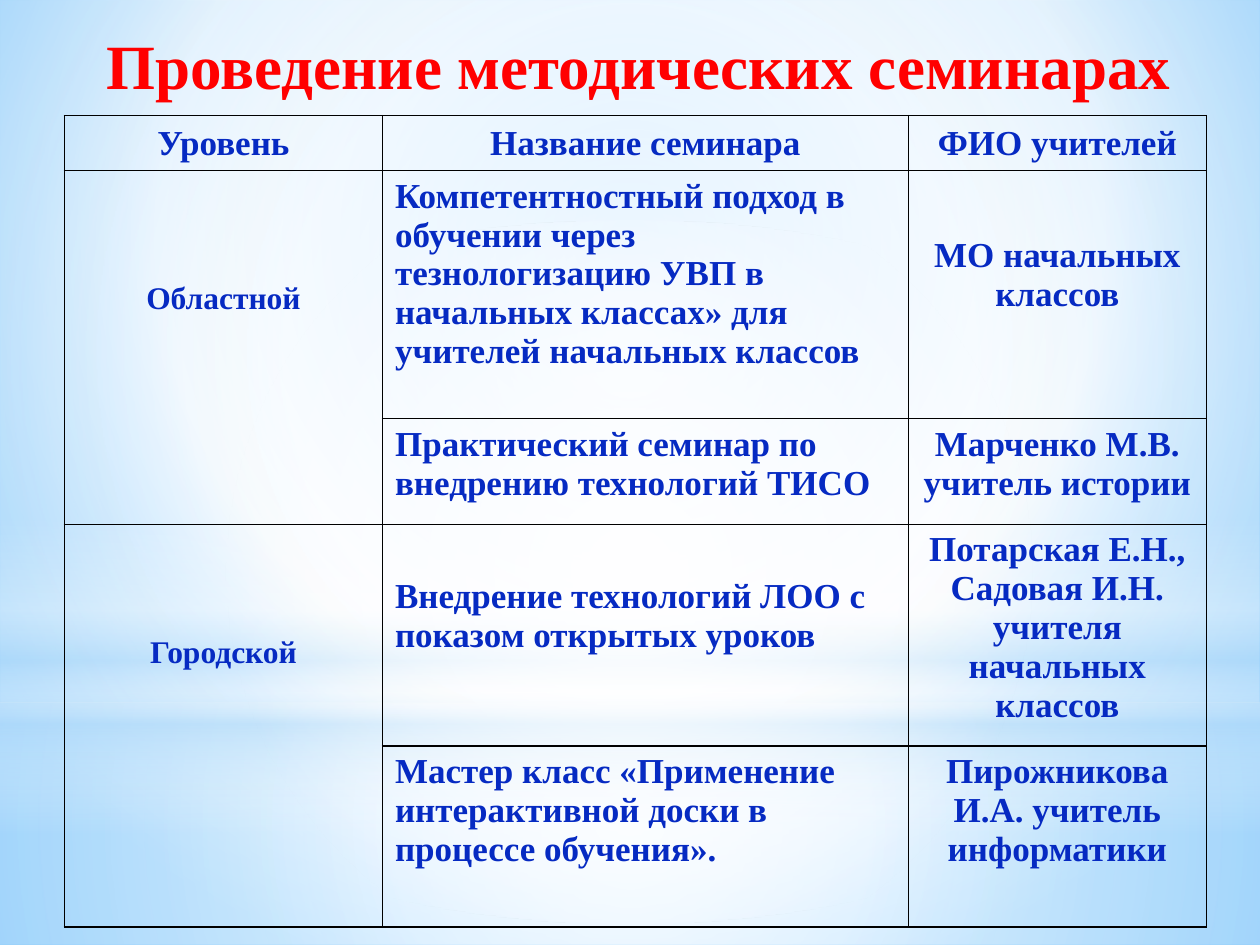
from lxml.etree import SubElement as Sub
from pptx import Presentation
from pptx.dml.color import RGBColor
from pptx.enum.shapes import MSO_SHAPE as Kind
from pptx.enum.text import MSO_ANCHOR as Anchor, MSO_AUTO_SIZE as Fit, PP_ALIGN as Align
from pptx.oxml import parse_xml
from pptx.oxml.ns import nsdecls, qn
from pptx.util import Cm, Pt

RED = RGBColor(0xFF, 0x00, 0x00)
BLUE = RGBColor(0x06, 0x2A, 0xC2)
BLACK = RGBColor(0x00, 0x00, 0x00)
WHITE = RGBColor(0xFF, 0xFF, 0xFF)
PALE = RGBColor(0xB4, 0xDC, 0xFA)
SKY = RGBColor(0x9E, 0xD5, 0xFF)
DEEP = RGBColor(0x5B, 0xB9, 0xFF)

FONT = "Times New Roman"
MID = (50, 50, 50, 50)
WIDE = 25.4
COLS = (6.41, 10.6, 6.01)
ROWS = (1.11, 5, 2.13, 4.47, 3.65)
PAD = 0.91
DROP = 2.24

PANELS = (
    (Kind.RECTANGLE, 14.17, 4.88, MID,
     ((0, WHITE, 91), (37, WHITE, 76), (100, PALE, 79))),
    (Kind.RECTANGLE, 0, 14.17, MID,
     ((0, WHITE, 89), (48, WHITE, 62), (100, PALE, 79))),
    (Kind.RECTANGLE, 10.46, 6.35, None,
     ((0, WHITE, 0), (29, WHITE, 30), (45, PALE, 40),
      (55, WHITE, 26), (65, PALE, 60), (100, WHITE, 0))),
    (Kind.OVAL, 4.45, 14.17, MID, ((0, WHITE, 100), (56, WHITE, 0))),
)

HEADS = ("Уровень", "Название семинара", "ФИО учителей")
LEVELS = ((1, "Областной"), (3, "Городской"))
TALKS = (
    ("Компетентностный подход в обучении через тезнологизацию УВП в "
     "начальных классах» для учителей начальных классов",
     "МО начальных классов"),
    ("Практический семинар по внедрению технологий ТИСО",
     "Марченко М.В. учитель истории"),
    ("Внедрение технологий ЛОО с показом открытых уроков",
     "Потарская Е.Н., Садовая И.Н.\nучителя начальных классов"),
    ("Мастер класс «Применение интерактивной доски в процессе обучения».",
     "Пирожникова И.А. учитель информатики"),
)
RAISED = {(1, 2), (3, 1)}


def write(frame, text, size=20, color=BLUE, align=Align.CENTER):
    frame.text = text
    for para in frame.paragraphs:
        para.alignment = align
        font = para.runs[0].font
        font.name, font.size, font.bold = FONT, Pt(size), True
        font.color.rgb = color


def blend(fill, root, stops, focus):
    fill.gradient()
    grad = root.find(".//" + qn("a:gradFill"))
    for part in list(grad):
        grad.remove(part)
    group = Sub(grad, qn("a:gsLst"))
    for place, color, alpha in stops:
        stop = Sub(group, qn("a:gs"), pos=str(place * 1000))
        tint = Sub(stop, qn("a:srgbClr"), val=str(color))
        Sub(tint, qn("a:alpha"), val=str(alpha * 1000))
    if focus:
        way = Sub(grad, qn("a:path"), path="circle")
        sides = {side: str(part * 1000) for side, part in zip("ltrb", focus)}
        Sub(way, qn("a:fillToRect"), **sides)
    else:
        Sub(grad, qn("a:lin"), ang="5400000", scaled="0")


def paint(slide):
    stops = ((0, SKY, 100), (60, WHITE, 100), (100, DEEP, 100))
    blend(slide.background.fill, slide.element, stops, (20, 10, 20, 60))
    for kind, top, high, focus, stops in PANELS:
        panel = slide.shapes.add_shape(kind, 0, Cm(top), Cm(WIDE), Cm(high))
        panel.shadow.inherit = False
        panel.line.fill.background()
        blend(panel.fill, panel.element, stops, focus)


def head(slide):
    title = slide.shapes.title
    slide.shapes.element.append(title.element)
    title.left, title.top = Cm(1.9), Cm(0.41)
    title.width, title.height = Cm(22.17), Cm(1.8)
    frame = title.text_frame
    write(frame, "Проведение методических семинарах", 36, RED, Align.LEFT)
    frame.word_wrap = False
    frame.auto_size = Fit.NONE
    frame.vertical_anchor = Anchor.TOP


def edge(cell):
    cell.fill.background()
    props = cell._tc.get_or_add_tcPr()
    for spot, side in enumerate("LRTB"):
        props.insert(spot, parse_xml(
            f'<a:ln{side} {nsdecls("a")} w="12700"><a:solidFill>'
            f'<a:srgbClr val="{BLACK}"/></a:solidFill></a:ln{side}>'))


def grid(slide):
    table = slide.shapes.add_table(
        len(ROWS), len(COLS), Cm(1.3), Cm(2.33),
        Cm(sum(COLS)), Cm(sum(ROWS))).table
    table.first_row = table.horz_banding = False
    for col, wide in zip(table.columns, COLS):
        col.width = Cm(wide)
    for row, high in zip(table.rows, ROWS):
        row.height = Cm(high)
    for cell in table.iter_cells():
        edge(cell)
    for col, text in enumerate(HEADS):
        cell = table.cell(0, col)
        write(cell.text_frame, text)
        cell.vertical_anchor = Anchor.MIDDLE
    for row, text in LEVELS:
        cell = table.cell(row, 0)
        cell.merge(table.cell(row + 1, 0))
        write(cell.text_frame, text, 18)
        cell.margin_top = Cm(DROP)
    for row, talk in enumerate(TALKS, 1):
        for col, text in enumerate(talk, 1):
            cell = table.cell(row, col)
            write(cell.text_frame, text,
                  align=Align.LEFT if col == 1 else Align.CENTER)
            if (row, col) in RAISED:
                cell.vertical_anchor = Anchor.MIDDLE
                cell.margin_bottom = Cm(PAD)


def main():
    deck = Presentation()
    deck.slide_width, deck.slide_height = Cm(WIDE), Cm(19.05)
    slide = deck.slides.add_slide(deck.slide_layouts[5])
    paint(slide)
    head(slide)
    grid(slide)
    deck.save("out.pptx")


if __name__ == "__main__":
    main()
